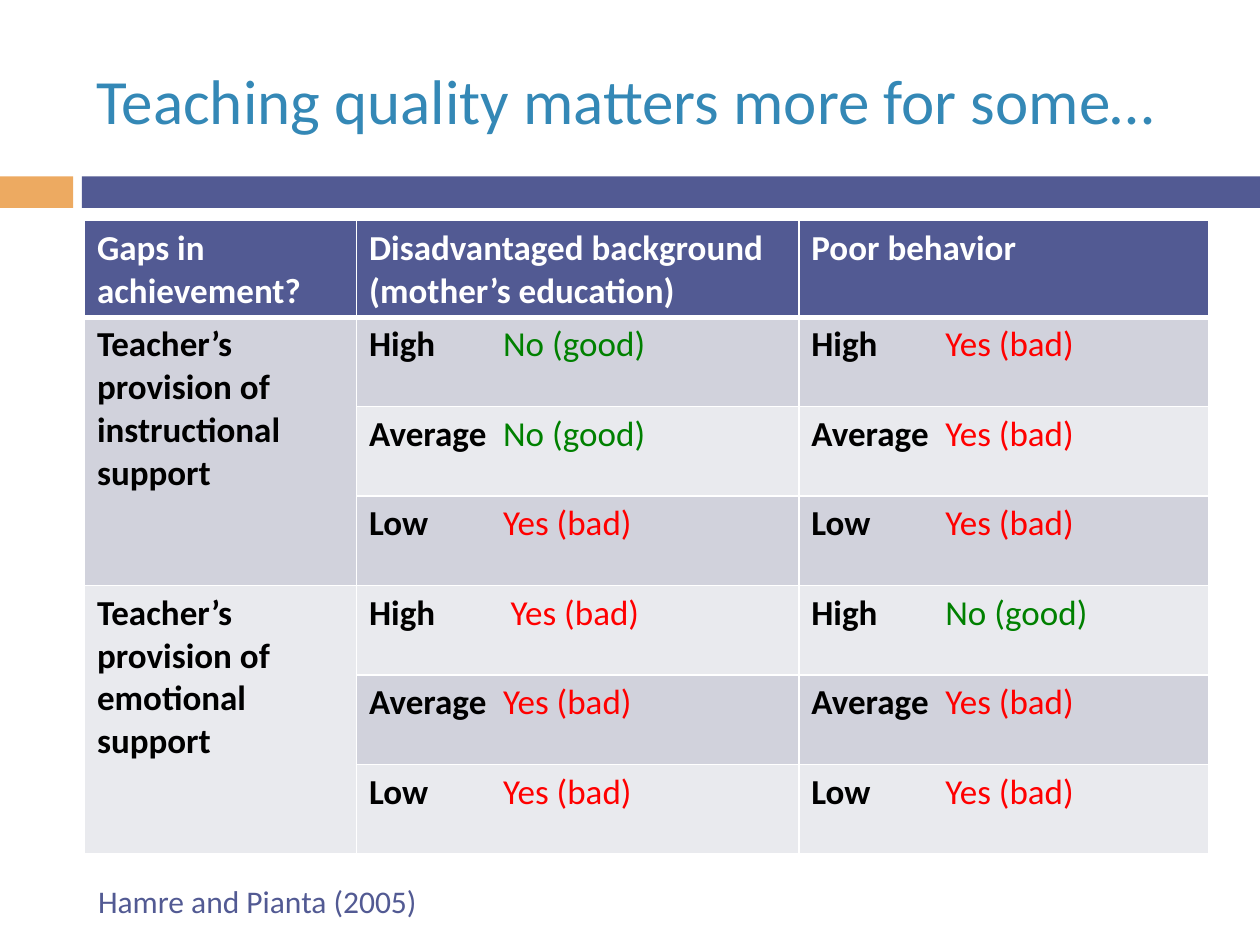
from lxml import etree
from pptx import Presentation
from pptx.dml.color import RGBColor
from pptx.enum.shapes import MSO_SHAPE as Shape
from pptx.enum.text import MSO_ANCHOR as Anchor
from pptx.oxml.ns import qn
from pptx.util import Inches, Pt

FONT = "Calibri"
INDIGO, ORANGE, BLUE = "525A93", "EDAA61", "3488B6"
WHITE, BLACK, GREEN, RED = "FFFFFF", "000000", "008000", "FF0000"
BANDS = ["D1D2DC", "E9EAEE"]

HEADERS = ["Gaps in achievement?",
           "Disadvantaged background (mother’s education)",
           "Poor behavior"]
LEVELS = ["High", "Average", "Low"]
GOOD, BAD = ("No (good)", GREEN), ("Yes (bad)", RED)
# Each kind of support: answers by level, for background and behavior
SUPPORTS = [
    ("Teacher’s provision of instructional support",
     [(GOOD, BAD), (GOOD, BAD), (BAD, BAD)]),
    ("Teacher’s provision of emotional support",
     [(BAD, GOOD), (BAD, BAD), (BAD, BAD)]),
]
COLUMN_WIDTHS = [2.16, 3.51, 3.25]
HEADER_HEIGHT, ROW_HEIGHT = 0.73, 0.71
TAB_STOP, WIDE_TAB_STOP = 1, 1.06


def color(value):
    return RGBColor.from_string(value)


def add_span(para, text, size, fill, bold=False):
    span = para.add_run()
    span.text = text
    formats = {"name": FONT, "size": Pt(size), "bold": bold}
    for name, value in formats.items():
        setattr(span.font, name, value)
    span.font.color.rgb = color(fill)


def add_bar(page, left, width, fill):
    bar = page.shapes.add_shape(Shape.RECTANGLE, Inches(left), Inches(1.4),
                                Inches(width), Inches(0.25))
    bar.shadow.inherit = False
    bar.fill.solid()
    bar.fill.fore_color.rgb = color(fill)
    bar.line.fill.background()


def add_text(page, place, text, size, fill, anchor=Anchor.TOP):
    box = page.shapes.add_textbox(*map(Inches, place))
    frame = box.text_frame
    formats = {"word_wrap": True, "vertical_anchor": anchor}
    for name, value in formats.items():
        setattr(frame, name, value)
    add_span(frame.paragraphs[0], text, size, fill)


def set_borders(cell, widths):
    """Draw white borders; widths are left, right, top, bottom in points."""
    props = cell._tc.get_or_add_tcPr()
    for index, (side, width) in enumerate(zip("LRTB", widths)):
        line = etree.Element(qn(f"a:ln{side}"), w=str(Pt(width)))
        solid = etree.SubElement(line, qn("a:solidFill"))
        etree.SubElement(solid, qn("a:srgbClr"), val=WHITE)
        props.insert(index, line)


def style_cell(cell, fill, top=1, bottom=1):
    cell.fill.solid()
    cell.fill.fore_color.rgb = color(fill)
    set_borders(cell, (1, 1, top, bottom))


def write_label(cell, text, fill):
    add_span(cell.text_frame.paragraphs[0], text, 20, fill, bold=True)


def write_answer(cell, level, answer, tab_stop):
    para = cell.text_frame.paragraphs[0]
    tabs = etree.SubElement(para._p.get_or_add_pPr(), qn("a:tabLst"))
    etree.SubElement(tabs, qn("a:tab"), pos=str(Inches(tab_stop)), algn="l")
    text, fill = answer
    add_span(para, f"{level}\t ", 20, BLACK, bold=True)
    add_span(para, text, 20, fill)


def add_gap_table(page):
    row_count = len(SUPPORTS) * len(LEVELS)
    height = HEADER_HEIGHT + row_count * ROW_HEIGHT
    table = page.shapes.add_table(
        row_count + 1, len(HEADERS), Inches(0.67), Inches(1.75),
        Inches(sum(COLUMN_WIDTHS)), Inches(height)).table
    for column, width in zip(table.columns, COLUMN_WIDTHS):
        column.width = Inches(width)
    for index, row in enumerate(table.rows):
        row.height = Inches(ROW_HEIGHT if index else HEADER_HEIGHT)

    # Header row
    for column, text in enumerate(HEADERS):
        cell = table.cell(0, column)
        style_cell(cell, INDIGO, bottom=3)
        write_label(cell, text, WHITE)

    # Banded body, with a thick line under the header
    for row in range(1, row_count + 1):
        for column in range(len(HEADERS)):
            style_cell(table.cell(row, column), BANDS[(row - 1) % 2],
                       top=3 if row == 1 else 1)

    # Support labels span their three levels
    for group, (support, answers) in enumerate(SUPPORTS):
        first = 1 + group * len(LEVELS)
        label = table.cell(first, 0)
        label.merge(table.cell(first + len(LEVELS) - 1, 0))
        write_label(label, support, BLACK)
        for row, (level, pair) in enumerate(zip(LEVELS, answers), first):
            for column, answer in enumerate(pair, 1):
                wide = (row, column) == (4, 1)
                write_answer(table.cell(row, column), level, answer,
                             WIDE_TAB_STOP if wide else TAB_STOP)


def main():
    deck = Presentation()
    deck.slide_width, deck.slide_height = Inches(10), Inches(7.5)
    page = deck.slides.add_slide(deck.slide_layouts[6])

    # Band under the title
    add_bar(page, 0, 0.58, ORANGE)
    add_bar(page, 0.65, 9.35, INDIGO)

    # Title, table and citation
    add_text(page, (0.67, 0.25, 8.92, 1.08),
             "Teaching quality matters more for some…", 36, BLUE, Anchor.MIDDLE)
    add_gap_table(page)
    add_text(page, (0.68, 6.95, 4.57, 0.4),
             "Hamre and Pianta (2005)", 18, INDIGO)
    deck.save("out.pptx")


if __name__ == "__main__":
    main()
